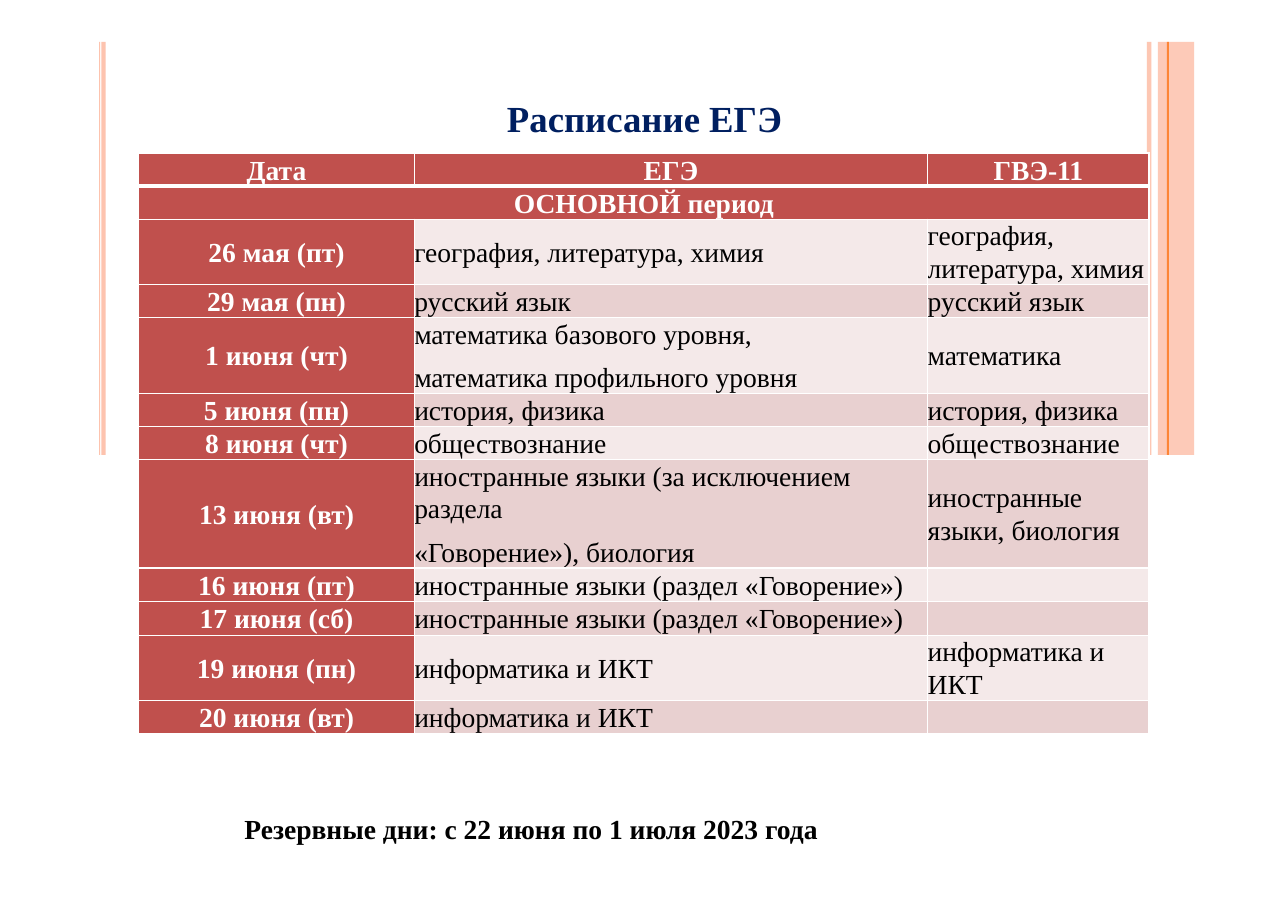
from lxml import etree
from pptx import Presentation
from pptx import util as u
from pptx.dml.color import RGBColor
from pptx.enum import shapes, text
from pptx.oxml import ns

WIDTH, HEIGHT = 11.69, 8.27
FONT = "Times New Roman"
NAVY = RGBColor(0x00, 0x1F, 0x60)
BLACK = RGBColor(0x00, 0x00, 0x00)
WHITE = RGBColor(0xFF, 0xFF, 0xFF)
BRICK = RGBColor(0xC0, 0x50, 0x4D)
PALE = RGBColor(0xF4, 0xE9, 0xE9)
ROSE = RGBColor(0xE8, 0xD0, 0xD0)
PEACH = RGBColor(0xFD, 0xC3, 0xAE)
ORANGE = RGBColor(0xFD, 0x85, 0x36)

STRIPES = [
    (10.41, 0.04, PEACH, 93),
    (0.9, 0.01, PEACH, 100),
    (0.92, 0.04, PEACH, 100),
    (10.51, 0.33, PEACH, 87),
    (10.59, 0.02, ORANGE, 100),
]
COLUMNS = [2.5, 4.66, 2.01]
HEADINGS = ["Дата", "ЕГЭ", "ГВЭ-11"]
PERIOD = "ОСНОВНОЙ период"
EXAMS = [
    ("26 мая (пт)", ["география, литература, химия"], "география, литература, химия", 0.59),
    ("29 мая (пн)", ["русский язык"], "русский язык", 0.3),
    ("1 июня (чт)", ["математика базового уровня,", "математика профильного уровня"],
     "математика", 0.69),
    ("5 июня (пн)", ["история, физика"], "история, физика", 0.3),
    ("8 июня (чт)", ["обществознание"], "обществознание", 0.3),
    ("13 июня (вт)", ["иностранные языки (за исключением раздела", "«Говорение»), биология"],
     "иностранные языки, биология", 0.98),
    ("16 июня (пт)", ["иностранные языки (раздел «Говорение»)"], "", 0.3),
    ("17 июня (сб)", ["иностранные языки (раздел «Говорение»)"], "", 0.3),
    ("19 июня (пн)", ["информатика и ИКТ"], "информатика и ИКТ", 0.59),
    ("20 июня (вт)", ["информатика и ИКТ"], "", 0.3),
]


def inches(box):
    """Convert a left, top, width, height box to lengths."""
    return [u.Inches(length) for length in box]


def add_span(para, words, size, color, bold):
    """Add one formatted run to a paragraph."""
    span = para.add_run()
    span.text = words
    span.font.name, span.font.size = FONT, u.Pt(size)
    span.font.color.rgb, span.font.bold = color, bold


def clear_margins(holder):
    """Remove the inner margins of a cell or text frame."""
    holder.margin_left = holder.margin_right = 0
    holder.margin_top = holder.margin_bottom = 0


def add_stripes(page, top, height):
    """Draw the vertical side stripes between top and top plus height."""
    for left, width, color, opacity in STRIPES:
        stripe = page.shapes.add_shape(
            shapes.MSO_SHAPE.RECTANGLE, *inches((left, top, width, height)))
        stripe.shadow.inherit = False
        stripe.line.fill.background()
        stripe.fill.solid()
        stripe.fill.fore_color.rgb = color
        if opacity < 100:
            tint = stripe.fill._xPr.find(".//" + ns.qn("a:srgbClr"))
            etree.SubElement(tint, ns.qn("a:alpha"), val=str(opacity * 1000))


def add_title(page, box):
    """Place the slide title in its placeholder."""
    title = page.shapes.title
    title.left, title.top, title.width, title.height = inches(box)
    frame = title.text_frame
    clear_margins(frame)
    frame.word_wrap = True
    frame.vertical_anchor = text.MSO_ANCHOR.TOP
    para = frame.paragraphs[0]
    para.alignment = text.PP_ALIGN.CENTER
    add_span(para, "Расписание ЕГЭ", 24, NAVY, True)


def set_borders(cell, top, bottom):
    """Give a cell white borders, with its own top and bottom weights."""
    props = cell._tc.get_or_add_tcPr()
    for index, (side, weight) in enumerate(
            [("lnL", 1), ("lnR", 1), ("lnT", top), ("lnB", bottom)]):
        line = etree.Element(ns.qn("a:" + side), w=str(u.Pt(weight)))
        fill = etree.SubElement(line, ns.qn("a:solidFill"))
        etree.SubElement(fill, ns.qn("a:srgbClr"), val=str(WHITE))
        props.insert(index, line)


def fill_cell(cell, lines, fill, heading, top=1, bottom=1):
    """Write paragraphs in a cell as a heading or as plain entries."""
    clear_margins(cell)
    cell.vertical_anchor = text.MSO_ANCHOR.MIDDLE
    cell.fill.solid()
    cell.fill.fore_color.rgb = fill
    set_borders(cell, top, bottom)
    frame = cell.text_frame
    for index, words in enumerate(lines):
        para = frame.add_paragraph() if index else frame.paragraphs[0]
        para.alignment = text.PP_ALIGN.CENTER if heading else text.PP_ALIGN.LEFT
        para.line_spacing, para.space_after = 1.07, u.Pt(6.8)
        add_span(para, words, 18, WHITE if heading else BLACK, heading)


def add_schedule(page, box):
    """Build the exam table in the given box."""
    heights = [0.3, 0.3] + [exam[3] for exam in EXAMS]
    table = page.shapes.add_table(len(heights), len(COLUMNS), *inches(box)).table
    for column, width in zip(table.columns, COLUMNS):
        column.width = u.Inches(box[2] * width / sum(COLUMNS))
    for row, height in zip(table.rows, heights):
        row.height = u.Inches(height)
    for column, heading in enumerate(HEADINGS):
        fill_cell(table.cell(0, column), [heading], BRICK, True, bottom=3)
        fill_cell(table.cell(1, column), [] if column else [PERIOD], BRICK, True, top=3)
    table.cell(1, 0).merge(table.cell(1, len(COLUMNS) - 1))
    for index, (date, main, alternative, _) in enumerate(EXAMS):
        band = ROSE if index % 2 else PALE
        fill_cell(table.cell(index + 2, 0), [date], BRICK, True)
        fill_cell(table.cell(index + 2, 1), main, band, False)
        fill_cell(table.cell(index + 2, 2), [alternative] if alternative else [], band, False)


def add_reserve_note(page, box):
    """Write the line about reserve days."""
    frame = page.shapes.add_textbox(*inches(box)).text_frame
    frame.word_wrap = False
    add_span(frame.paragraphs[0], "Резервные дни: с 22 июня по 1 июля 2023 года",
             18, BLACK, True)


def main():
    """Build and save the schedule slide."""
    deck = Presentation()
    deck.slide_width, deck.slide_height = u.Inches(WIDTH), u.Inches(HEIGHT)
    page = deck.slides.add_slide(deck.slide_layouts[5])
    add_stripes(page, 0.38, 3.75)
    add_title(page, (2.59, 0.87, 6.52, 0.4))
    add_schedule(page, (1.26, 1.39, sum(COLUMNS), 5.24))
    add_reserve_note(page, (2.12, 7.32, 5.46, 0.4))
    deck.save("out.pptx")


if __name__ == "__main__":
    main()
